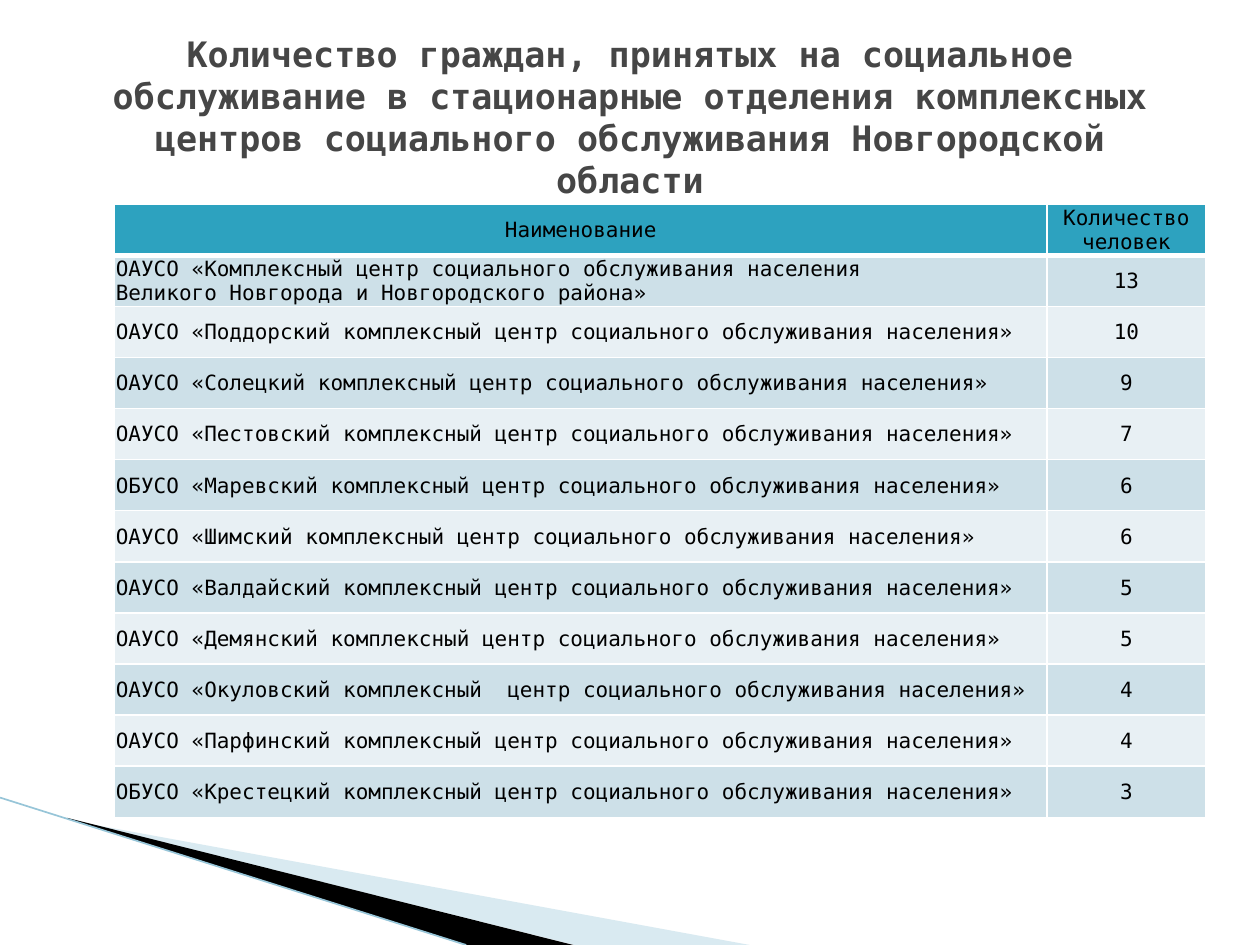
from lxml.etree import SubElement
from pptx import Presentation
from pptx.dml.color import RGBColor
from pptx.enum.shapes import MSO_CONNECTOR
from pptx.enum.text import MSO_ANCHOR, MSO_AUTO_SIZE, PP_ALIGN
from pptx.oxml import parse_xml
from pptx.oxml.ns import nsdecls, qn
from pptx.util import Inches, Pt

COLORS = {
    "title": "464646",
    "text": "000000",
    "header": "2DA2BF",
    "odd": "CDE0E8",
    "even": "E8F0F4",
    "border": "FFFFFF",
    "pale": "A0CBDC",
    "dark": "000000",
    "edge": "97C5D8",
}
COLUMNS, ROWS = 100, 75

TITLE = (
    "Количество граждан, принятых на социальное обслуживание в стационарные "
    "отделения комплексных центров социального обслуживания Новгородской области"
)
HEADER = ("Наименование", "Количество человек")
CENTER = "комплексный центр социального обслуживания населения"
CENTERS = [
    ("ОАУСО «Комплексный центр социального обслуживания населения\n"
     "Великого Новгорода и Новгородского района»", 13),
    (f"ОАУСО «Поддорский {CENTER}»", 10),
    (f"ОАУСО «Солецкий {CENTER}»", 9),
    (f"ОАУСО «Пестовский {CENTER}»", 7),
    (f"ОБУСО «Маревский {CENTER}»", 6),
    (f"ОАУСО «Шимский {CENTER}»", 6),
    (f"ОАУСО «Валдайский {CENTER}»", 5),
    (f"ОАУСО «Демянский {CENTER}»", 5),
    ("ОАУСО «Окуловский комплексный  центр социального обслуживания населения»", 4),
    (f"ОАУСО «Парфинский {CENTER}»", 4),
    (f"ОБУСО «Крестецкий {CENTER}»", 3),
]


def color(name):
    return RGBColor.from_string(COLORS[name])


def write_text(frame, text, *, size=12, fill="text", bold=False,
               align=PP_ALIGN.LEFT, font="DejaVu Sans Mono"):
    frame.text = text
    for paragraph in frame.paragraphs:
        paragraph.alignment = align
        paragraph.font.name = font
        paragraph.font.size = Pt(size)
        paragraph.font.bold = bold
        paragraph.font.color.rgb = color(fill)


class SlideBuilder:
    """Places styled elements on a slide by grid columns and rows."""

    def __init__(self, presentation):
        self.slide = presentation.slides.add_slide(presentation.slide_layouts[5])
        self.column = presentation.slide_width / COLUMNS
        self.row = presentation.slide_height / ROWS

    def point(self, column, row):
        return round(column * self.column), round(row * self.row)

    def title(self, text, left, top, width, height):
        shape = self.slide.shapes.title
        shape.element.getparent().append(shape.element)
        shape.left, shape.top = self.point(left, top)
        shape.width, shape.height = self.point(width, height)
        frame = shape.text_frame
        write_text(frame, text, size=20, fill="title", bold=True, align=PP_ALIGN.CENTER)
        frame.word_wrap = True
        frame.auto_size = MSO_AUTO_SIZE.NONE
        frame.vertical_anchor = MSO_ANCHOR.MIDDLE

    def wedge(self, points, fill, opacity=100):
        first, *others = [self.point(*point) for point in points]
        builder = self.slide.shapes.build_freeform(*first)
        builder.add_line_segments(others, close=True)
        shape = builder.convert_to_shape()
        shape.shadow.inherit = False
        shape.fill.solid()
        shape.fill.fore_color.rgb = color(fill)
        shape.line.fill.background()
        if opacity < 100:
            rgb = shape.element.spPr.find(f"{qn('a:solidFill')}/{qn('a:srgbClr')}")
            SubElement(rgb, qn("a:alpha"), val=str(opacity * 1000))

    def line(self, start, end, stroke, width):
        connector = self.slide.shapes.add_connector(
            MSO_CONNECTOR.STRAIGHT, *self.point(*start), *self.point(*end))
        connector.line.color.rgb = color(stroke)
        connector.line.width = Pt(width)
        SubElement(connector.element.spPr, qn("a:effectLst"))

    def cell(self, cell, text, fill, align, borders):
        write_text(cell.text_frame, text, align=align)
        cell.vertical_anchor = MSO_ANCHOR.MIDDLE
        cell.margin_left = cell.margin_right = cell.margin_top = Inches(0.01)
        cell.margin_bottom = 0
        cell.fill.solid()
        cell.fill.fore_color.rgb = color(fill)
        properties = cell._tc.get_or_add_tcPr()
        for index, (side, width) in enumerate(borders.items()):
            properties.insert(index, parse_xml(
                f'<a:ln{side} {nsdecls("a")} w="{Pt(width)}"><a:solidFill>'
                f'<a:srgbClr val="{COLORS["border"]}"/></a:solidFill></a:ln{side}>'))

    def table(self, records, left, top, widths, height):
        position = self.point(left, top)
        size = self.point(sum(widths), height)
        table = self.slide.shapes.add_table(
            len(records), len(widths), *position, *size).table
        for column, width in zip(table.columns, widths):
            column.width = self.point(width, 0)[0]
        for row, record in enumerate(records):
            fill = "header" if row == 0 else "odd" if row % 2 else "even"
            borders = {"L": 1, "R": 1, "T": 3 if row == 1 else 1, "B": 1 if row else 3}
            for column, value in enumerate(record):
                align = PP_ALIGN.LEFT if row and column == 0 else PP_ALIGN.CENTER
                self.cell(table.cell(row, column), str(value), fill, align, borders)


def main():
    presentation = Presentation()
    presentation.slide_width, presentation.slide_height = Inches(10), Inches(7.5)
    builder = SlideBuilder(presentation)
    builder.wedge([(5.5, 65.1), (59.5, 75), (45.6, 75), (5.5, 65)], "pale", opacity=40)
    builder.wedge([(5.3, 64.9), (45.5, 75), (37, 75), (5.4, 65)], "dark")
    builder.line((0, 63.3), (37, 75), "edge", 0.95)
    builder.title(TITLE, 5, 3, 90, 12.5)
    builder.table([HEADER, *CENTERS], 9.1, 16.2, (74, 12.6), 48.7)
    presentation.save("out.pptx")


if __name__ == "__main__":
    main()
